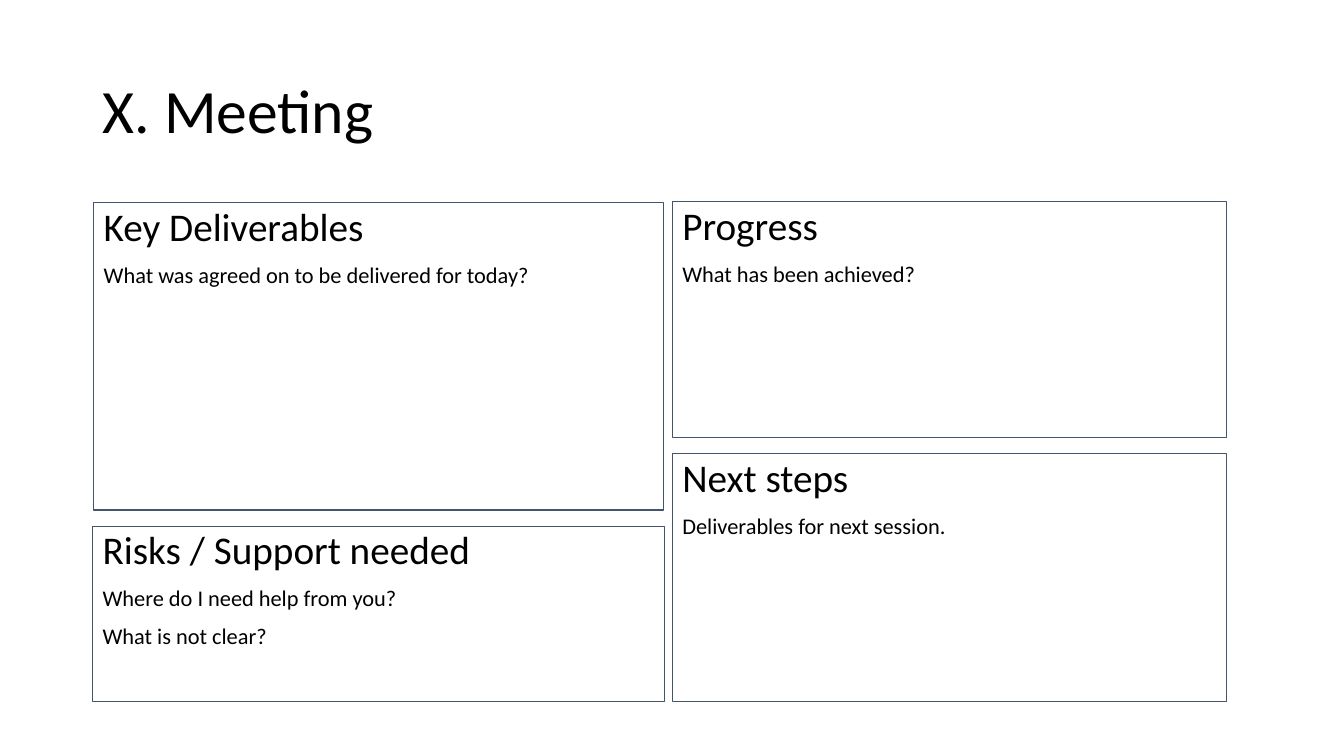
import pptx
import pptx.dml.color
import pptx.enum.shapes
import pptx.enum.text
import pptx.util

Inches = pptx.util.Inches
Pt = pptx.util.Pt
BLACK = pptx.dml.color.RGBColor(0x00, 0x00, 0x00)
SLATE = pptx.dml.color.RGBColor(0x44, 0x54, 0x6A)
ANCHOR = pptx.enum.text.MSO_ANCHOR


class MeetingSlide:
    font = "Calibri"
    title_size, heading_size, prompt_size = 44, 28, 16
    line_spacing = 0.9
    space_before = 10

    def __init__(self, slide):
        self.slide = slide

    def set_lines(self, frame, lines, sizes, space_before, anchor):
        """Fill the frame with one left-aligned paragraph per line."""
        frame.word_wrap = True
        frame.vertical_anchor = anchor
        frame.text = "\n".join(lines)
        for paragraph, size in zip(frame.paragraphs, sizes):
            paragraph.alignment = pptx.enum.text.PP_ALIGN.LEFT
            paragraph.line_spacing = self.line_spacing
            paragraph.space_before = Pt(space_before)
            for run in paragraph.runs:
                run.font.name = self.font
                run.font.size = Pt(size)
                run.font.color.rgb = BLACK

    def title(self, text, left, top, width, height):
        heading = self.slide.shapes.add_textbox(
            Inches(left), Inches(top), Inches(width), Inches(height))
        self.set_lines(heading.text_frame, [text], [self.title_size], 0,
                       ANCHOR.MIDDLE)

    def panel(self, heading, prompts, left, top, width, height):
        """Draw an outlined box with a heading and its prompts."""
        panel = self.slide.shapes.add_shape(
            pptx.enum.shapes.MSO_SHAPE.RECTANGLE,
            Inches(left), Inches(top), Inches(width), Inches(height))
        panel.shadow.inherit = False
        panel.fill.background()
        panel.line.color.rgb = SLATE
        panel.line.width = Pt(0.75)
        sizes = [self.heading_size] + [self.prompt_size] * len(prompts)
        self.set_lines(panel.text_frame, [heading, *prompts], sizes,
                       self.space_before, ANCHOR.TOP)


PANELS = [
    ("Key Deliverables", ["What was agreed on to be delivered for today?"],
     0.93, 2.01, 5.65, 3.05),
    ("Progress", ["What has been achieved?"], 6.67, 2, 5.5, 2.34),
    ("Risks / Support needed",
     ["Where do I need help from you?", "What is not clear?"],
     0.92, 5.22, 5.67, 1.74),
    ("Next steps", ["Deliverables for next session."], 6.67, 4.5, 5.5, 2.46),
]


def main():
    deck = pptx.Presentation()
    deck.slide_width = Inches(13.33)
    deck.slide_height = Inches(7.5)
    meeting = MeetingSlide(deck.slides.add_slide(deck.slide_layouts[6]))
    meeting.title("X. Meeting", 0.92, 0.4, 11.5, 1.45)
    for panel in PANELS:
        meeting.panel(*panel)
    deck.save("out.pptx")


if __name__ == "__main__":
    main()
